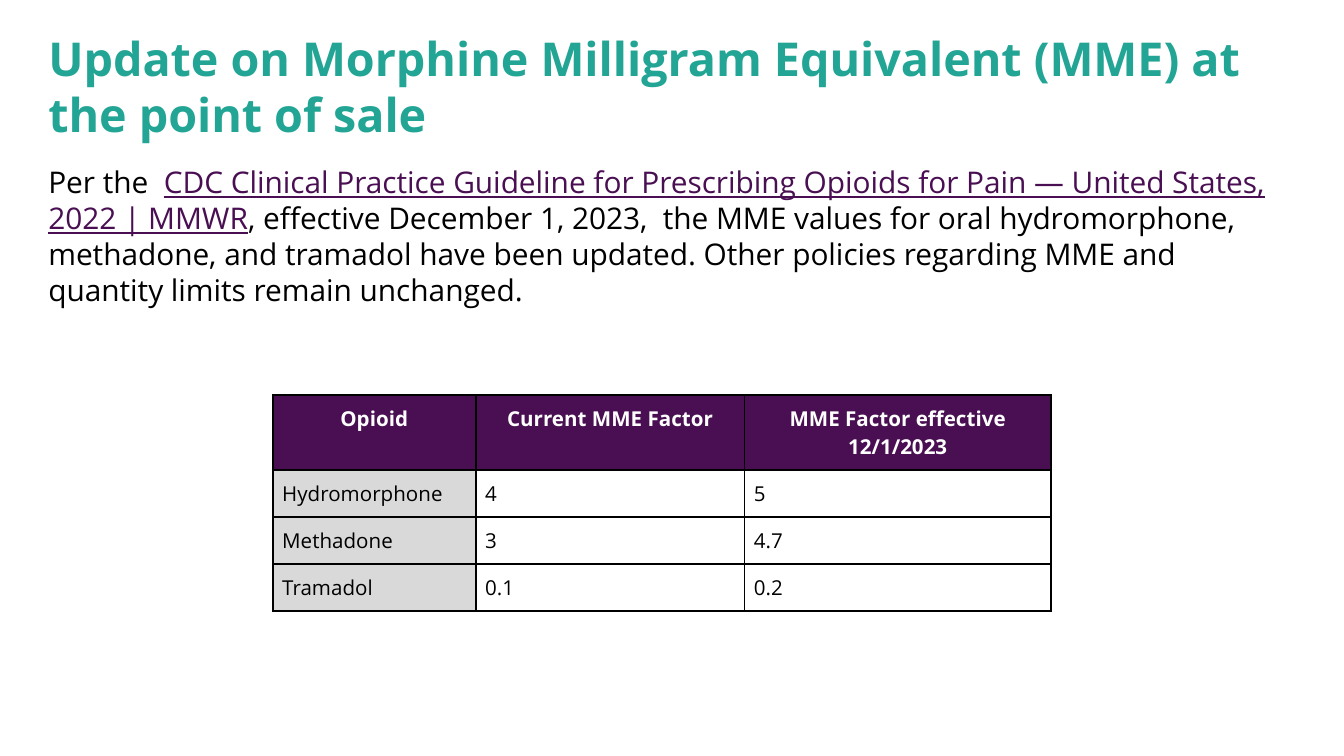
from lxml import etree
from pptx import Presentation
from pptx import util as u
from pptx.dml.color import RGBColor
from pptx.enum import text
from pptx.oxml import ns

FONT = "Open Sans"
TEAL, PURPLE, GREY, BLACK, WHITE = "23A595", "490F52", "D9D9D9", "000000", "FFFFFF"

TITLE = "Update on Morphine Milligram Equivalent (MME) at the point of sale"
BODY = [
    ("Per the  ", BLACK, False),
    ("CDC Clinical Practice Guideline for Prescribing Opioids for Pain — United States, 2022 | MMWR",
     PURPLE, True),
    (", effective December 1, 2023,  the MME values for oral hydromorphone, methadone, and tramadol "
     "have been updated. Other policies regarding MME and quantity limits remain unchanged.",
     BLACK, False),
]
FACTORS = [
    ("Opioid", "Current MME Factor", "MME Factor effective 12/1/2023"),
    ("Hydromorphone", "4", "5"),
    ("Methadone", "3", "4.7"),
    ("Tramadol", "0.1", "0.2"),
]
COLUMN_WIDTHS = (1.51, 2, 2.28)
ROW_HEIGHTS = (0.55, 0.35, 0.35, 0.35)


def color(value):
    return RGBColor.from_string(value)


def format_run(run, size, value, bold=False, underline=False):
    run.font.name = FONT
    run.font.size = u.Pt(size)
    run.font.color.rgb = color(value)
    run.font.bold = bold
    run.font.underline = underline


def place(shape, box):
    shape.left, shape.top, shape.width, shape.height = map(u.Inches, box)
    frame = shape.text_frame
    frame.word_wrap = True
    frame.auto_size = text.MSO_AUTO_SIZE.NONE
    frame.vertical_anchor = text.MSO_ANCHOR.TOP
    frame.margin_left = frame.margin_right = u.Inches(0.1)
    frame.margin_top = frame.margin_bottom = u.Inches(0.1)
    paragraph = frame.paragraphs[0]
    paragraph.alignment = text.PP_ALIGN.LEFT
    paragraph.line_spacing = 1.0
    paragraph.space_before = u.Pt(0)
    return paragraph


def add_borders(cell):
    properties = cell._tc.get_or_add_tcPr()
    for position, side in enumerate(("lnL", "lnR", "lnT", "lnB")):
        line = etree.Element(ns.qn(f"a:{side}"), w=str(u.Pt(1)))
        fill = etree.SubElement(line, ns.qn("a:solidFill"))
        etree.SubElement(fill, ns.qn("a:srgbClr"), val=BLACK)
        properties.insert(position, line)


def add_factor_table(slide):
    table = slide.shapes.add_table(
        len(FACTORS), len(COLUMN_WIDTHS), u.Inches(2.03), u.Inches(2.94),
        u.Inches(sum(COLUMN_WIDTHS)), u.Inches(sum(ROW_HEIGHTS))).table
    for column, width in zip(table.columns, COLUMN_WIDTHS):
        column.width = u.Inches(width)
    for i, (row, height) in enumerate(zip(table.rows, ROW_HEIGHTS)):
        row.height = u.Inches(height)
        header = i == 0
        for j, cell in enumerate(row.cells):
            cell.margin_left = cell.margin_right = u.Inches(0.07)
            cell.margin_top = cell.margin_bottom = u.Inches(0.07)
            cell.fill.solid()
            cell.fill.fore_color.rgb = color(PURPLE if header else GREY if j == 0 else WHITE)
            add_borders(cell)
            paragraph = cell.text_frame.paragraphs[0]
            paragraph.text = FACTORS[i][j]
            paragraph.alignment = text.PP_ALIGN.CENTER if header else text.PP_ALIGN.LEFT
            format_run(paragraph.runs[0], 11, WHITE if header else BLACK, bold=header)


def main():
    """Build the slide on updated MME factors."""
    presentation = Presentation()
    presentation.slide_width = u.Inches(10)
    presentation.slide_height = u.Inches(10 * 9 / 16)
    slide = presentation.slides.add_slide(presentation.slide_layouts[1])
    title, body = slide.placeholders

    paragraph = place(title, (0.26, 0.12, 9.4, 0.88))
    paragraph.text = TITLE
    format_run(paragraph.runs[0], 25, TEAL, bold=True)

    paragraph = place(body, (0.26, 1.12, 9.33, 4.02))
    properties = paragraph._p.get_or_add_pPr()
    properties.set("marL", "0")
    properties.set("indent", "0")
    etree.SubElement(properties, ns.qn("a:buNone"))
    for words, value, underline in BODY:
        run = paragraph.add_run()
        run.text = words
        format_run(run, 16, value, underline=underline)

    add_factor_table(slide)
    presentation.save("out.pptx")


if __name__ == "__main__":
    main()
